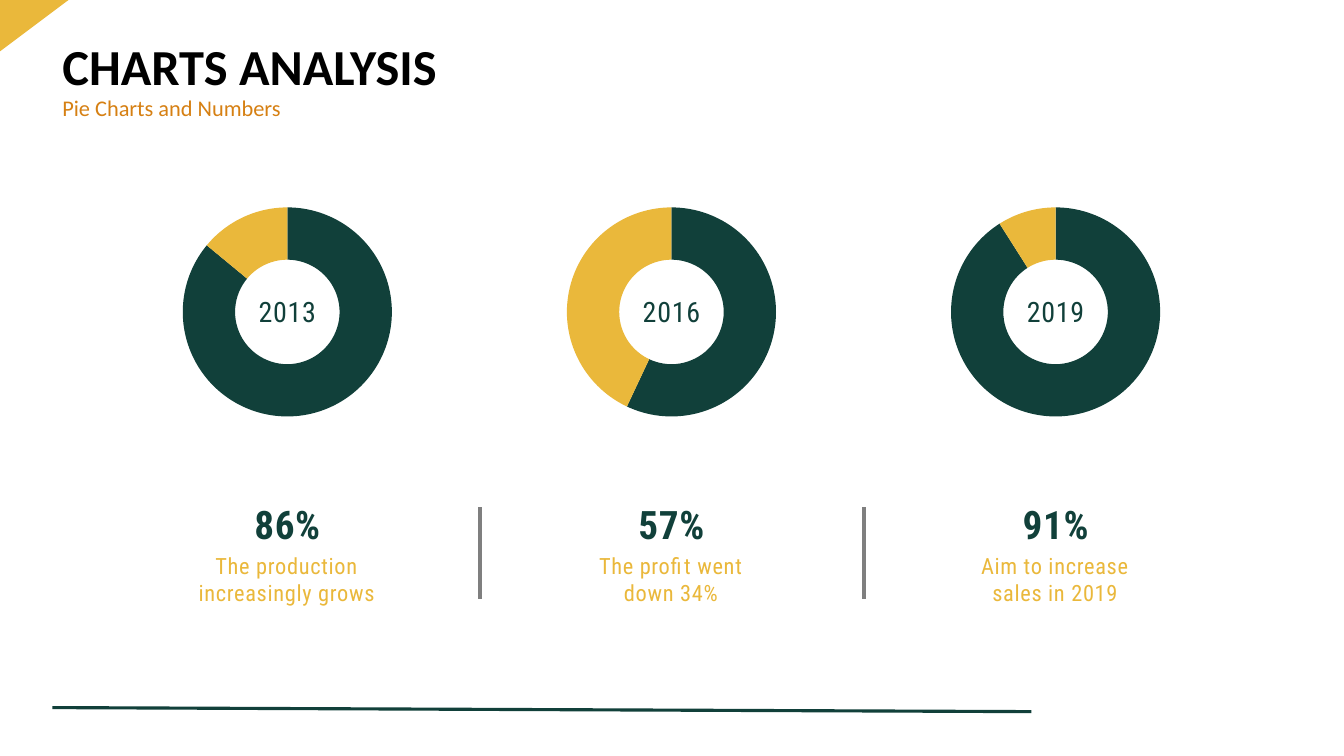
import pptx
import pptx.util
import pptx.chart.data
import pptx.dml.color
import pptx.enum.chart
import pptx.enum.shapes
import pptx.enum.text
import pptx.oxml.ns
from lxml import etree

PX = 9144
GREEN = pptx.dml.color.RGBColor(0x11, 0x40, 0x3A)
GOLD = pptx.dml.color.RGBColor(0xEA, 0xB8, 0x3B)
ORANGE = pptx.dml.color.RGBColor(0xD6, 0x80, 0x13)
GRAY = pptx.dml.color.RGBColor(0x7F, 0x7F, 0x7F)
BLACK = pptx.dml.color.RGBColor(0, 0, 0)
CENTER = pptx.enum.text.PP_ALIGN.CENTER
MIDDLE = pptx.enum.text.MSO_ANCHOR.MIDDLE
TOP = pptx.enum.text.MSO_ANCHOR.TOP

COLUMN_LEFT, COLUMN_TOP, COLUMN_WIDTH, COLUMN_PITCH = 109, 192, 352, 381
YEARS = [
    ("2013", 86, "The production increasingly grows"),
    ("2016", 57, "The profit went down 34%"),
    ("2019", 91, "Aim to increase sales in 2019"),
]


def scaled(*lengths):
    """Turn px lengths into EMU."""
    return [pptx.util.Emu(length * PX) for length in lengths]


def add_text(page, text, box, size, color, font="Roboto Condensed", bold=False,
             align=CENTER, anchor=MIDDLE, line_spacing=1.0, tracking=50):
    """Place one formatted paragraph in a text box."""
    frame = page.shapes.add_textbox(*scaled(*box)).text_frame
    frame.word_wrap = True
    frame.vertical_anchor = anchor
    para = frame.paragraphs[0]
    para.alignment = align
    para.line_spacing = line_spacing
    span = para.add_run()
    span.text = text
    span.font.name = font
    span.font.size = pptx.util.Pt(size)
    span.font.bold = bold
    span.font.color.rgb = color
    span.font._element.set("spc", str(tracking))


def add_line(page, ends, color, weight):
    """Draw a straight line without a shadow."""
    line = page.shapes.add_connector(
        pptx.enum.shapes.MSO_CONNECTOR.STRAIGHT, *scaled(*ends))
    line.line.color.rgb = color
    line.line.width = pptx.util.Pt(weight)
    etree.SubElement(line.element.spPr, pptx.oxml.ns.qn("a:effectLst"))


def add_frame(page):
    """Draw the corner triangle and the bottom rule."""
    add_line(page, (52, 702, 1023, 706), GREEN, 2.25)
    corner = page.shapes.add_shape(
        pptx.enum.shapes.MSO_SHAPE.RIGHT_TRIANGLE, *scaled(0, 0, 68, 51))
    corner.shadow.inherit = False
    corner.fill.solid()
    corner.fill.fore_color.rgb = GOLD
    corner.line.fill.background()
    corner.element.spPr.xfrm.set("flipV", "1")


def add_heading(page, left, top, width):
    """Write the title and the subtitle below it."""
    style = dict(font="Calibri", align=pptx.enum.text.PP_ALIGN.LEFT,
                 line_spacing=0.9, tracking=0)
    add_text(page, "CHARTS ANALYSIS", (left, top, width, 60), 36, BLACK,
             bold=True, **style)
    add_text(page, "Pie Charts and Numbers", (left, top + 50, width, 39), 16,
             ORANGE, **style)


def add_doughnut(page, box, percent):
    """Chart a percentage against its remainder."""
    data = pptx.chart.data.CategoryChartData()
    data.categories = ["1", "2", "3", "4"]
    data.add_series("Series 1", (percent, 100 - percent, None, None))
    chart = page.shapes.add_chart(
        pptx.enum.chart.XL_CHART_TYPE.DOUGHNUT, *scaled(*box), data).chart
    chart.has_legend = False
    chart.has_title = False
    chart.font.name = "Karla"
    chart.font.size = pptx.util.Pt(10)
    chart.font.color.rgb = BLACK
    plot = chart.plots[0]
    plot.vary_by_categories = True
    for index, color in enumerate((GREEN, GOLD, GOLD, GOLD)):
        part = plot.series[0].points[index].format
        part.fill.solid()
        part.fill.fore_color.rgb = color
        part.line.fill.background()
    for hole in chart.element.iter(pptx.oxml.ns.qn("c:holeSize")):
        hole.set("val", "75")


def add_year(page, left, top, width, year, percent, caption):
    """Place a doughnut with its year, percentage and caption."""
    add_doughnut(page, (left, top, width, 235), percent)
    middle = left + width // 2
    add_text(page, year, (middle - 54, top + 94, 108, 45), 20, GREEN)
    add_text(page, f"{percent}%", (middle - 54, top + 299, 108, 57), 28, GREEN,
             bold=True)
    add_text(page, caption, (middle - 99, top + 351, 197, 64), 16, GOLD,
             anchor=TOP)


def add_years(page, left, top):
    """Lay out the year columns with dividers between them."""
    for index, entry in enumerate(YEARS):
        column = left + index * COLUMN_PITCH
        add_year(page, column, top, COLUMN_WIDTH, *entry)
        if index:
            divider = column - 14
            add_line(page, (divider, top + 311, divider, top + 402), GRAY, 3)


def main():
    """Build and save the slide."""
    deck = pptx.Presentation()
    deck.slide_width, deck.slide_height = scaled(1333, 750)
    page = deck.slides.add_slide(deck.slide_layouts[6])
    add_frame(page)
    add_heading(page, 52, 39, 1229)
    add_years(page, COLUMN_LEFT, COLUMN_TOP)
    deck.save("out.pptx")


if __name__ == "__main__":
    main()
